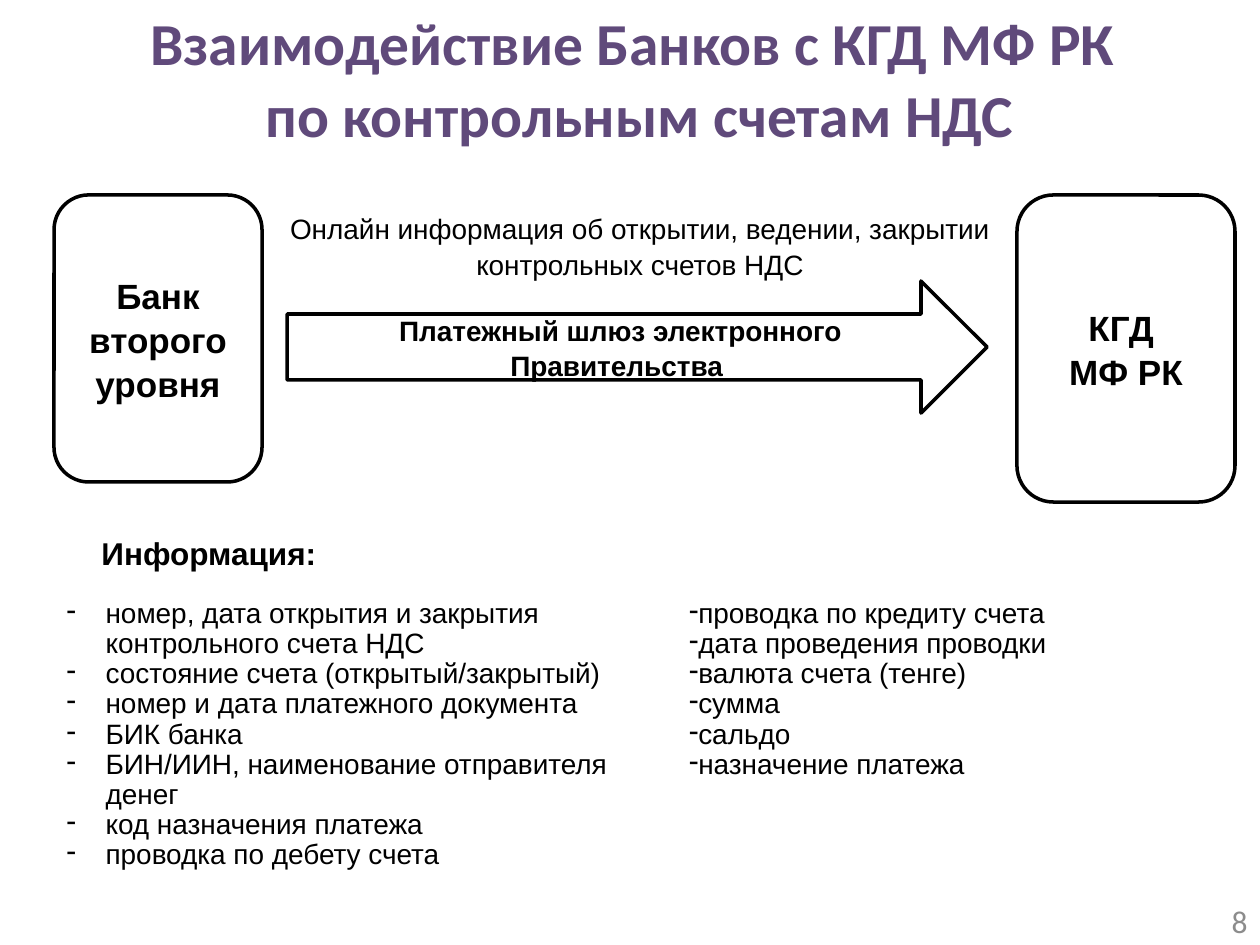
from lxml import etree
from pptx import Presentation
from pptx.dml.color import RGBColor
from pptx.enum.shapes import MSO_SHAPE
from pptx.enum.text import MSO_ANCHOR, MSO_AUTO_SIZE, PP_ALIGN
from pptx.oxml.ns import qn
from pptx.util import Pt

ROUNDED, ARROW = MSO_SHAPE.ROUNDED_RECTANGLE, MSO_SHAPE.RIGHT_ARROW
TOP, MIDDLE = MSO_ANCHOR.TOP, MSO_ANCHOR.MIDDLE
LEFT, CENTER, RIGHT = PP_ALIGN.LEFT, PP_ALIGN.CENTER, PP_ALIGN.RIGHT
PX_PER_INCH = 126
BLACK, PURPLE, GRAY = "000000", "604A7B", "8C8C8C"

# Content: boxes are left, top, width, height in px
TITLE = ["Взаимодействие Банков с КГД МФ РК", " по контрольным счетам НДС"]
TITLE_BOX = (54, 0, 1157, 122)
FLOW_SHAPES = [
    (ROUNDED, (54, 195, 208, 287), 20, ["Банк второго уровня"]),
    (ROUNDED, (1017, 195, 218, 307), 20, ["КГД ", "МФ РК"]),
    (ARROW, (287, 281, 700, 132), 16, ["Платежный шлюз электронного Правительства "]),
]
# box, lines, font, size, colour, bold, alignment, anchor
LABELS = [
    ((253, 204, 774, 81),
     ["Онлайн информация об открытии, ведении, закрытии контрольных счетов НДС"],
     "Arial", 16, BLACK, False, CENTER, TOP),
    ((89, 528, 500, 48), ["Информация:"], "Arial", 18, BLACK, True, LEFT, MIDDLE),
    ((966, 895, 294, 50), ["8"], "Calibri", 18, GRAY, False, RIGHT, MIDDLE),
]
TABLE_BOX = (54, 593, 1171, 308)
# bullet indent in px, items
COLUMNS = [
    (-39, [
        "номер, дата открытия и закрытия контрольного счета НДС",
        "состояние счета (открытый/закрытый)",
        "номер и дата платежного документа",
        "БИК банка",
        "БИН/ИИН, наименование отправителя денег",
        "код назначения платежа",
        "проводка по дебету счета",
    ]),
    (-2, [
        "проводка по кредиту счета",
        "дата проведения проводки",
        "валюта счета (тенге)",
        "сумма",
        "сальдо",
        "назначение платежа",
    ]),
]
LIST_MARGIN = 39


def px(length):
    return round(length * 914400 / PX_PER_INCH)


def color(value):
    return RGBColor.from_string(value)


def place(box):
    return [px(length) for length in box]


def write(frame, lines, font, size, text_color, bold, alignment, spacing):
    frame.word_wrap = True
    for index, line in enumerate(lines):
        paragraph = frame.add_paragraph() if index else frame.paragraphs[0]
        paragraph.text = line
        paragraph.alignment = alignment
        paragraph.line_spacing = spacing
        paragraph.font.name = font
        paragraph.font.size = Pt(size)
        paragraph.font.bold = bold
        paragraph.font.color.rgb = color(text_color)


def add_dash(paragraph, indent):
    properties = paragraph._p.get_or_add_pPr()
    properties.set("marL", str(px(LIST_MARGIN)))
    properties.set("indent", str(px(indent)))
    bullet = etree.Element(qn("a:buChar"), char="-")
    # The bullet goes before the default run properties
    properties.find(qn("a:defRPr")).addprevious(bullet)


presentation = Presentation()
presentation.slide_width, presentation.slide_height = px(1260), px(945)
slide = presentation.slides.add_slide(presentation.slide_layouts[5])

# Title
title = slide.shapes.title
title.left, title.top, title.width, title.height = place(TITLE_BOX)
write(title.text_frame, TITLE, "Calibri", 34, PURPLE, True, CENTER, 1.0)
title.text_frame.vertical_anchor = TOP
title.text_frame.auto_size = MSO_AUTO_SIZE.NONE
for paragraph in title.text_frame.paragraphs:
    paragraph.space_before = Pt(0)

# Bank, gateway arrow and committee
for kind, box, size, lines in FLOW_SHAPES:
    shape = slide.shapes.add_shape(kind, *place(box))
    shape.shadow.inherit = False
    shape.fill.background()
    shape.line.color.rgb = color(BLACK)
    shape.line.width = Pt(2)
    write(shape.text_frame, lines, "Arial", size, BLACK, True, CENTER, 1.05)
    shape.text_frame.vertical_anchor = MIDDLE

# Flow caption, list heading and page number
for box, lines, font, size, text_color, bold, alignment, anchor in LABELS:
    frame = slide.shapes.add_textbox(*place(box)).text_frame
    write(frame, lines, font, size, text_color, bold, alignment, 1.05)
    frame.vertical_anchor = anchor

# Two-column list of transmitted data
table = slide.shapes.add_table(1, len(COLUMNS), *place(TABLE_BOX)).table
for cell, (indent, items) in zip(table.rows[0].cells, COLUMNS):
    cell.fill.background()
    write(cell.text_frame, items, "Arial", 16, BLACK, False, LEFT, 0.97)
    for paragraph in cell.text_frame.paragraphs:
        add_dash(paragraph, indent)

presentation.save("out.pptx")
